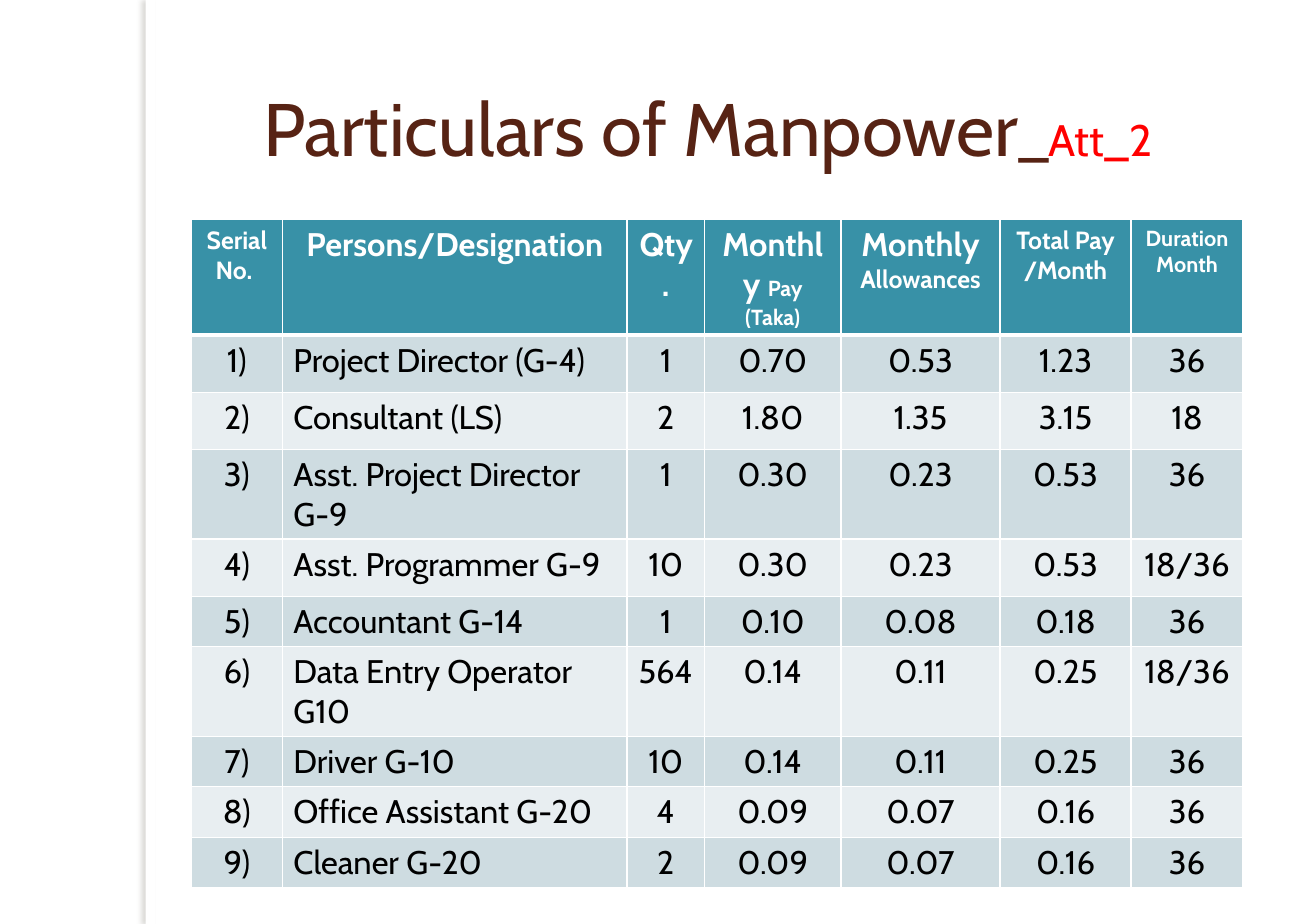
from pptx import Presentation
from pptx.dml.color import RGBColor
from pptx.enum.shapes import MSO_SHAPE
from pptx.enum.text import MSO_ANCHOR, PP_ALIGN
from pptx.oxml import parse_xml
from pptx.oxml.ns import nsdecls
from pptx.util import Inches, Pt

FONT = "Cabin"
WHITE, BLACK, BROWN, RED = "FFFFFF", "000000", "572314", "FF0000"
TEAL, BANDS = "3891A7", ("CEDCE1", "E8EEF1")

COLS = [0.81, 3.08, 0.69, 1.22, 1.42, 1.17, 1]
ROWS = [0.67] + [0.51] * 4 + [0.39] * 5

# Each heading is a list of paragraphs, each paragraph a list of (text, size)
HEADS = [
    [[("Serial No. ", 16)]],
    [[("Persons/Designation", 21)]],
    [[("Qty.", 21)]],
    [[("Monthly ", 21), ("Pay (Taka)", 14)]],
    [[("Monthly ", 21), ("Allowances", 16)]],
    [[("Total Pay", 16)], [("/Month", 16)]],
    [[("Duration", 14)], [("Month", 14)]],
]
STAFF = [
    ("Project Director (G-4)", "1", "0.70", "0.53", "1.23", "36"),
    ("Consultant (LS)", "2", "1.80", "1.35", "3.15", "18"),
    ("Asst. Project Director G-9", "1", "0.30", "0.23", "0.53", "36"),
    ("Asst. Programmer G-9", "10", "0.30", "0.23", "0.53", "18/36"),
    ("Accountant G-14", "1", "0.10", "0.08", "0.18", "36"),
    ("Data Entry Operator G10", "564", "0.14", "0.11", "0.25", "18/36"),
    ("Driver G-10", "10", "0.14", "0.11", "0.25", "36"),
    ("Office Assistant G-20", "4", "0.09", "0.07", "0.16", "36"),
    ("Cleaner G-20", "2", "0.09", "0.07", "0.16", "36"),
]


def color(code):
    return RGBColor.from_string(code)


def paint(part, code):
    part.fill.solid()
    part.fill.fore_color.rgb = color(code)


def add_run(para, text, size, code, bold=False):
    run = para.add_run()
    run.text = text
    look = {"name": FONT, "size": Pt(size), "bold": bold}
    for key, value in look.items():
        setattr(run.font, key, value)
    run.font.color.rgb = color(code)


def write(frame, paras, code, align=PP_ALIGN.CENTER, bold=False):
    for i, runs in enumerate(paras):
        para = frame.add_paragraph() if i else frame.paragraphs[0]
        para.alignment = align
        for text, size in runs:
            add_run(para, text, size, code, bold)


def edge(cell, base):
    """Draw white cell borders, with the bottom one of the given width."""
    props = cell._tc.get_or_add_tcPr()
    for i, (side, width) in enumerate(zip("LRTB", (1, 1, 1, base))):
        props.insert(i, parse_xml(
            f'<a:ln{side} {nsdecls("a")} w="{Pt(width)}"><a:solidFill>'
            f'<a:srgbClr val="{WHITE}"/></a:solidFill></a:ln{side}>'))


def add_strip(slide, box):
    strip = slide.shapes.add_shape(MSO_SHAPE.RECTANGLE, *map(Inches, box))
    paint(strip, WHITE)
    strip.line.fill.background()
    # Soft shadow to the left
    strip._element.spPr.append(parse_xml(
        f'<a:effectLst {nsdecls("a")}><a:outerShdw blurRad="{Pt(3)}" '
        f'dist="{Pt(3)}" dir="10800000" algn="tl" rotWithShape="0">'
        '<a:srgbClr val="736F63"><a:alpha val="25000"/></a:srgbClr>'
        '</a:outerShdw></a:effectLst>'))


def add_title(slide, box):
    frame = slide.shapes.add_textbox(*map(Inches, box)).text_frame
    frame.word_wrap = True
    frame.vertical_anchor = MSO_ANCHOR.MIDDLE
    para = frame.paragraphs[0]
    para.alignment = PP_ALIGN.CENTER
    add_run(para, "Particulars of Manpower", 47.8, BROWN)
    add_run(para, "_", 35.1, BROWN)
    add_run(para, "Att_2", 28.3, RED)


def add_staff(slide, box):
    table = slide.shapes.add_table(
        len(ROWS), len(COLS), *map(Inches, box)).table
    for col, width in zip(table.columns, COLS):
        col.width = Inches(width)
    for row, height in zip(table.rows, ROWS):
        row.height = Inches(height)
    # Heading row
    for c, paras in enumerate(HEADS):
        cell = table.cell(0, c)
        write(cell.text_frame, paras, WHITE, bold=True)
        paint(cell, TEAL)
        edge(cell, 3)
    # Banded staff rows
    for r, staff in enumerate(STAFF, 1):
        for c, text in enumerate((f"{r})", *staff)):
            cell = table.cell(r, c)
            align = PP_ALIGN.LEFT if c == 1 else PP_ALIGN.CENTER
            write(cell.text_frame, [[(text, 21)]], BLACK, align)
            paint(cell, BANDS[(r - 1) % 2])
            edge(cell, 1)


def main():
    deck = Presentation()
    deck.slide_width, deck.slide_height = Inches(11.75), Inches(8.25)
    slide = deck.slides.add_slide(deck.slide_layouts[6])
    slide.background.fill.solid()
    slide.background.fill.fore_color.rgb = color(WHITE)
    add_strip(slide, (1.3, 0, 0.09, 8.25))
    add_title(slide, (1.71, 0.62, 9.22, 1.02))
    add_staff(slide, (1.71, 1.96, sum(COLS), sum(ROWS)))
    deck.save("out.pptx")


if __name__ == "__main__":
    main()
